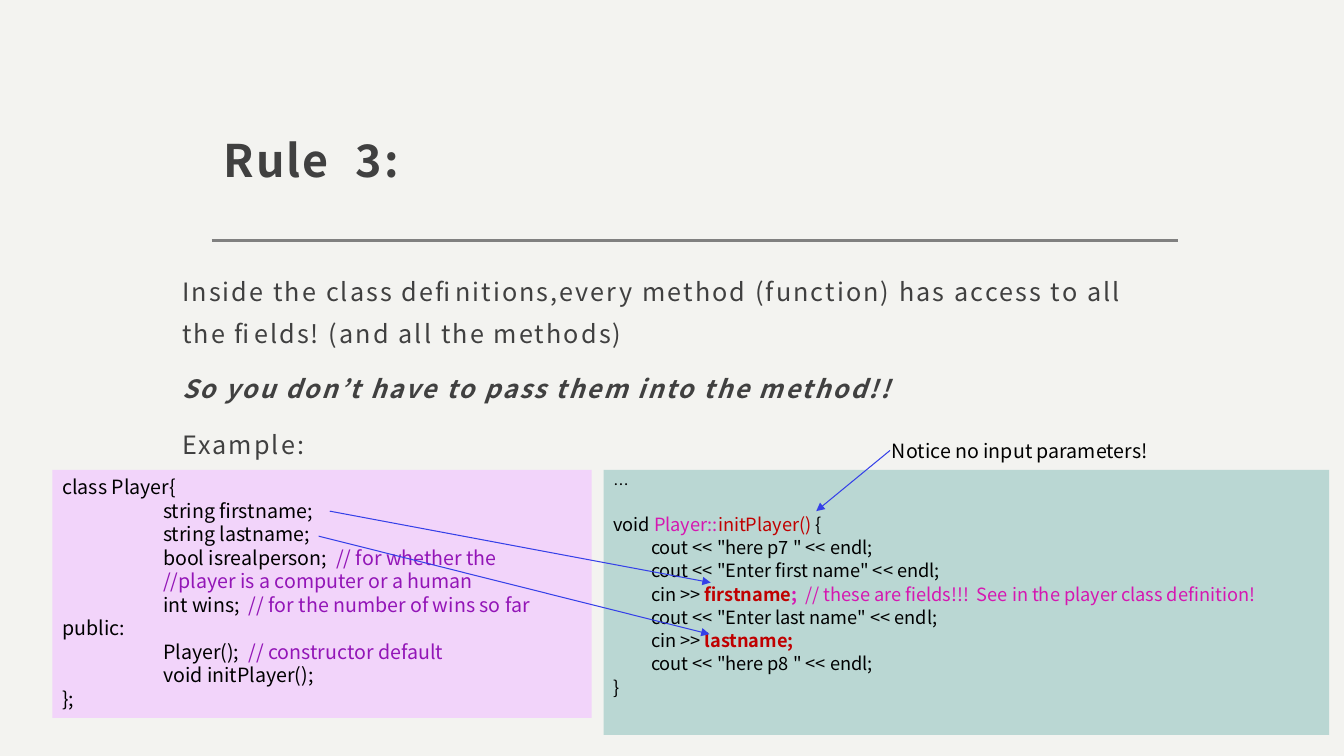
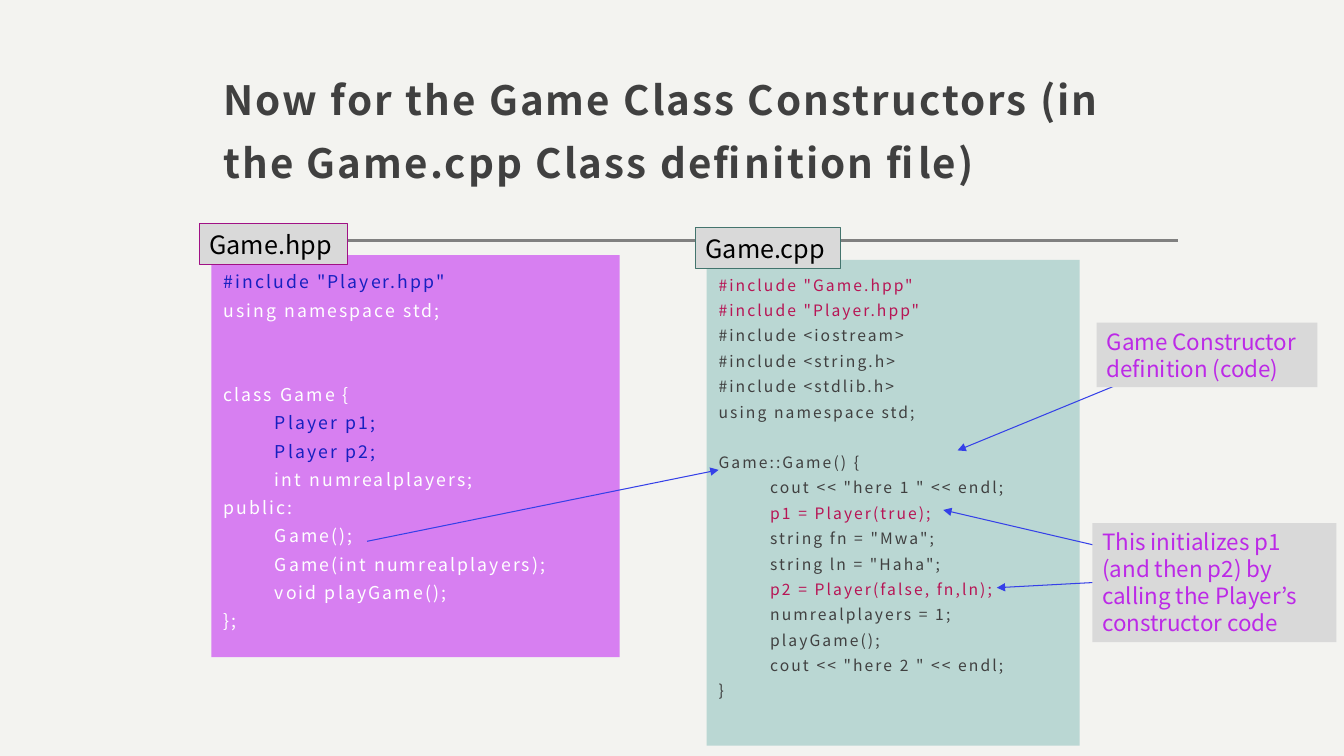
from lxml import etree
from pptx import Presentation
from pptx.dml.color import RGBColor
from pptx.enum.shapes import MSO_CONNECTOR, MSO_SHAPE
from pptx.enum.text import MSO_ANCHOR, MSO_AUTO_SIZE, PP_ALIGN
from pptx.oxml.ns import qn
from pptx.util import Cm, Pt

RECTANGLE = MSO_SHAPE.RECTANGLE
STRAIGHT = MSO_CONNECTOR.STRAIGHT
TOP, BOTTOM = MSO_ANCHOR.TOP, MSO_ANCHOR.BOTTOM
LEFT = PP_ALIGN.LEFT
FIXED = MSO_AUTO_SIZE.NONE
LEFT_SIDE = 1

FONT = "Noto Sans CJK JP"
PAPER, RULE, INK = "F3F3F0", "808080", "404040"
BLACK, WHITE, GRAY = "000000", "FFFFFF", "D9D9D9"
LILAC, VIOLET, TEAL = "F2D4FA", "D77FF1", "BAD7D3"
PURPLE, MAGENTA, RED = "9315B7", "D517B1", "C00000"
CRIMSON, NAVY, ORCHID = "B71555", "1620C0", "BC29E7"
ARROW = "3540E8"

PLAIN = {"color": BLACK, "leading": 1.0, "before": 0, "spc": 0, "indent": 0,
         "bold": False, "anchor": TOP, "sides": 0.25, "top": 0.13, "bottom": 0.13}
SPACED = PLAIN | {"color": INK, "spc": 150, "sides": 0.3, "top": 0.3, "bottom": 0.25}
HEADING = SPACED | {"bold": True, "leading": 1.3, "anchor": BOTTOM}
PROSE = SPACED | {"size": 18, "leading": 1.4, "before": 9.3}
GAME_CODE = SPACED | {"leading": 1.2, "before": 2, "indent": 1.3}
CALLOUT = PLAIN | {"size": 16, "color": ORCHID}
FILE_LABEL = PLAIN | {"size": 18}

rgb = RGBColor.from_string


def write(shape, lines, style):
    frame = shape.text_frame
    frame_format = {
        "word_wrap": True, "auto_size": FIXED, "vertical_anchor": style["anchor"],
        "margin_left": Cm(style["sides"]), "margin_right": Cm(style["sides"]),
        "margin_top": Cm(style["top"]), "margin_bottom": Cm(style["bottom"]),
    }
    for name, value in frame_format.items():
        setattr(frame, name, value)
    for number, (level, extra, *runs) in enumerate(lines):
        paragraph = frame.add_paragraph() if number else frame.paragraphs[0]
        paragraph_format = {"alignment": LEFT, "line_spacing": style["leading"],
                            "space_before": Pt(style["before"] + extra), "space_after": Pt(0)}
        for name, value in paragraph_format.items():
            setattr(paragraph, name, value)
        properties = paragraph._p.get_or_add_pPr()
        properties.set("marL", str(Cm(style["indent"] * level)))
        properties.set("indent", "0")
        etree.SubElement(properties, qn("a:buNone"))
        for words, *changes in runs:
            run = paragraph.add_run()
            run.text = words
            look = {"name": FONT, "size": Pt(style["size"]), "bold": style["bold"],
                    "color": style["color"]}
            for change in changes:
                look |= change
            run.font.color.rgb = rgb(look.pop("color"))
            for name, value in look.items():
                setattr(run.font, name, value)
            run._r.get_or_add_rPr().set("spc", str(style["spc"]))


def connect(slide, start, end, color=ARROW, width=0.75, head=True):
    line = slide.shapes.add_connector(STRAIGHT, *[Cm(value) for value in start + end])
    line.line.color.rgb = rgb(color)
    line.line.width = Pt(width)
    outline = line._element.spPr
    if head:
        etree.SubElement(outline.find(qn("a:ln")), qn("a:tailEnd"), type="triangle")
    etree.SubElement(outline, qn("a:effectLst"))
    return line


deck = Presentation()
deck.slide_width, deck.slide_height = Cm(33.87), Cm(19.05)
background = deck.slide_master.background.fill
background.solid()
background.fore_color.rgb = rgb(PAPER)

purple, magenta, red = {"color": PURPLE}, {"color": MAGENTA}, {"color": RED}
crimson, navy = {"color": CRIMSON}, {"color": NAVY}
bold, italic = {"bold": True}, {"italic": True}

rule_text = [
    (0, 0, ("Inside the class definitions,every method (function) has access to all "
            "the fields! (and all the methods)",)),
    (0, 0, ("So you don’t have to pass them into the method!!", bold, italic)),
    (0, 0, ("Example:",)),
]
game_cpp = [
    (0, 0, ('#include "Game.hpp"', crimson)),
    (0, 0, ('#include "Player.hpp"', crimson)),
    (0, 0, ("#include <iostream>",)),
    (0, 0, ("#include <string.h>",)),
    (0, 0, ("#include <stdlib.h>",)),
    (0, 0, ("using namespace std;",)),
    (0, 18, ("Game::Game() {",)),
    (1, 0, ('cout << "here 1 " << endl;',)),
    (1, 0, ("p1 = Player(true);", crimson)),
    (1, 0, ('string fn = "Mwa";',)),
    (1, 0, ('string ln = "Haha";',)),
    (1, 0, ("p2 = Player(false, fn,ln);", crimson)),
    (1, 0, ("numrealplayers = 1;",)),
    (1, 0, ("playGame();",)),
    (1, 0, ('cout << "here 2 " << endl;',)),
    (0, 0, ("}",)),
]
game_hpp = [
    (0, 0, ('#include "Player.hpp"', navy)),
    (0, 0, ("using namespace std;",)),
    (0, 40.3, ("class Game {",)),
    (1, 0, ("Player p1;", navy)),
    (1, 0, ("Player p2;", navy)),
    (1, 0, ("int numrealplayers;",)),
    (0, 0, ("public:",)),
    (1, 0, ("Game();",)),
    (1, 0, ("Game(int numrealplayers);",)),
    (1, 0, ("void playGame();",)),
    (0, 0, ("};",)),
]
player_class = [
    (0, 0, ("class Player{",)),
    (1, 0, ("string firstname;",)),
    (1, 0, ("string lastname;",)),
    (1, 0, ("bool isrealperson;  ",), ("// for whether the", purple)),
    (1, 0, ("//player is a computer or a human", purple)),
    (1, 0, ("int wins;  ",), ("// for the number of wins so far", purple)),
    (0, 0, ("public:",)),
    (1, 0, ("Player();  ",), ("// constructor default", purple)),
    (1, 0, ("void initPlayer();",)),
    (0, 0, ("};",)),
]
init_player = [
    (0, -1, ("…", {"size": Pt(11)})),
    (0, 13, ("void ",), ("Player::", magenta), ("initPlayer() ", red), ("{",)),
    (1, 0, ('cout << "here p7 " << endl;',)),
    (1, 0, ('cout << "Enter first name" << endl;',)),
    (1, 0, ("cin >> ",), ("firstname", red, bold), (";  ", magenta, bold),
     ("// these are fields!!!  See in the player class definition!", magenta)),
    (1, 0, ('cout << "Enter last name" << endl;',)),
    (1, 0, ("cin >> ",), ("lastname;", red, bold)),
    (1, 0, ('cout << "here p8 " << endl;',)),
    (0, 0, ("}",)),
]

pages = [
    ("Rule  3:", 32, (4.29, 6.35, 25.4, 11.96), None, rule_text, PROSE),
    ("Now for the Game Class Constructors (in the Game.cpp Class definition file)", 28.8,
     (17.81, 6.55, 9.4, 12.24), TEAL, game_cpp, GAME_CODE | {"size": 11.2}),
]
slides = []
for heading, size, body_area, body_fill, body_lines, body_style in pages:
    slide = deck.slides.add_slide(deck.slide_layouts[1])
    slides.append(slide)
    title, body = slide.placeholders
    for holder, area in ((title, (5.33, 1.22, 24.36, 3.73)), (body, body_area)):
        for side, value in zip(("left", "top", "width", "height"), area):
            setattr(holder, side, Cm(value))
    write(title, [(0, 0, (heading,))], HEADING | {"size": size})
    write(body, body_lines, body_style)
    if body_fill:
        body.fill.solid()
        body.fill.fore_color.rgb = rgb(body_fill)
    connect(slide, (5.33, 6.05), (29.69, 6.05), RULE, 2, False)
rule_slide, game_slide = slides

connect(game_slide, (28.32, 9.63), (24.13, 11.35))
connect(game_slide, (28.58, 13.97), (23.77, 12.85))

boxes = [
    (rule_slide, (1.32, 11.84, 13.59, 6.25), LILAC, None, player_class,
     PLAIN | {"size": 14, "indent": 2.54}),
    (rule_slide, (15.21, 11.84, 18.29, 6.68), TEAL, None, init_player,
     PLAIN | {"size": 13, "indent": 0.95, "before": 1}),
    (rule_slide, (22.23, 10.92, 7.34, 0.86), None, None,
     [(0, 0, ("Notice no input parameters!",))], PLAIN | {"size": 14}),
    (game_slide, (5.33, 6.43, 10.29, 10.13), VIOLET, None, game_hpp,
     GAME_CODE | {"size": 12.6, "color": WHITE}),
    (game_slide, (17.53, 5.74, 3.66, 1.02), GRAY, "43746D",
     [(0, 0, ("Game.cpp",))], FILE_LABEL),
    (game_slide, (5.03, 5.64, 3.73, 1.02), GRAY, "A01185",
     [(0, 0, ("Game.hpp",))], FILE_LABEL),
    (game_slide, (27.64, 8.13, 5.56, 1.63), GRAY, None,
     [(0, 0, ("Game Constructor definition (code)",))], CALLOUT),
    (game_slide, (27.53, 13.18, 6.15, 3), GRAY, None,
     [(0, 0, ("This initializes p1 (and then p2) by calling the Player’s "
              "constructor code",))], CALLOUT),
]
for slide, area, fill, border, lines, style in boxes:
    place = [Cm(value) for value in area]
    if fill:
        box = slide.shapes.add_shape(RECTANGLE, *place)
        box.shadow.inherit = False
        box.fill.solid()
        box.fill.fore_color.rgb = rgb(fill)
        if border:
            box.line.color.rgb = rgb(border)
            box.line.width = Pt(0.75)
        else:
            box.line.fill.background()
    else:
        box = slide.shapes.add_textbox(*place)
    write(box, lines, style)
initializer_note = box

for slide, start, end in [
    (rule_slide, (22.43, 11.35), (20.57, 12.88)),
    (rule_slide, (8.31, 12.88), (17.91, 14.68)),
    (rule_slide, (8.03, 13.51), (17.88, 15.98)),
    (game_slide, (9.25, 13.64), (18.11, 11.84)),
]:
    connect(slide, start, end)
second_player = connect(game_slide, (27.53, 14.68), (25.12, 14.81))
second_player.begin_connect(initializer_note, LEFT_SIDE)

deck.save("out.pptx")
